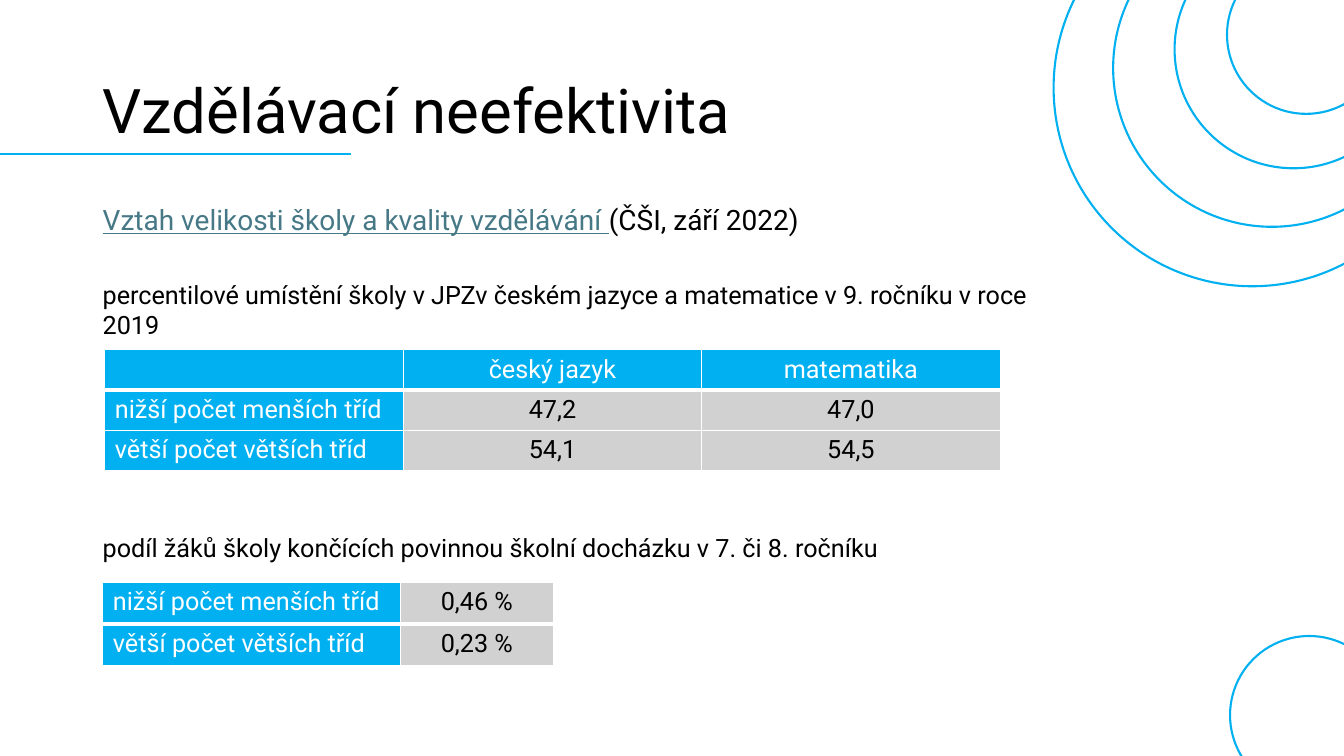
from lxml import etree
from pptx import Presentation
from pptx import util as u
from pptx.dml.color import RGBColor
from pptx.enum import shapes, text
from pptx.oxml import ns

BLUE = RGBColor(0x00, 0xB0, 0xF0)
GREY = RGBColor(0xD1, 0xD1, 0xD1)
WHITE = RGBColor(0xFF, 0xFF, 0xFF)
BLACK = RGBColor(0x00, 0x00, 0x00)
LINK = RGBColor(0x46, 0x78, 0x86)

THIN, THICK = u.Pt(1), u.Pt(3)
LEFT, CENTER = text.PP_ALIGN.LEFT, text.PP_ALIGN.CENTER


class SlideBuilder:
    font_name = "Roboto"
    line_width = u.Pt(1.5)

    def __init__(self, slide):
        self.slide = slide

    def add_run(self, paragraph, wording, size=18, color=BLACK, underline=False):
        run = paragraph.add_run()
        run.text = wording
        run.font.color.rgb = color
        font_format = {"name": self.font_name, "size": u.Pt(size), "underline": underline}
        for name, value in font_format.items():
            setattr(run.font, name, value)

    def add_text(self, box, runs, frame_format=None, paragraph_format=None):
        frame = self.slide.shapes.add_textbox(*map(u.Inches, box)).text_frame
        for name, value in {"word_wrap": True, **(frame_format or {})}.items():
            setattr(frame, name, value)
        paragraph = frame.paragraphs[0]
        for name, value in (paragraph_format or {}).items():
            setattr(paragraph, name, value)
        for run in runs:
            self.add_run(paragraph, **run)

    def add_circle(self, parent, left, top, diameter):
        circle = parent.add_shape(shapes.MSO_SHAPE.OVAL,
                                  *map(u.Inches, (left, top, diameter, diameter)))
        circle.shadow.inherit = False
        circle.fill.background()
        circle.line.color.rgb = BLUE
        circle.line.width = self.line_width

    def add_line(self, start, end):
        line = self.slide.shapes.add_connector(shapes.MSO_CONNECTOR.STRAIGHT,
                                               *map(u.Inches, (*start, *end)))
        line.line.color.rgb = BLUE
        line.line.width = self.line_width
        etree.SubElement(line._element.spPr, ns.qn("a:effectLst"))

    def add_borders(self, cell, widths):
        properties = cell._tc.get_or_add_tcPr()
        for side, width in widths.items():
            border = etree.SubElement(properties, ns.qn(f"a:ln{side}"), w=str(width))
            fill = etree.SubElement(border, ns.qn("a:solidFill"))
            etree.SubElement(fill, ns.qn("a:srgbClr"), val=str(WHITE))

    def add_table(self, left, top, columns, row_height, rows, header=False):
        box = (left, top, sum(columns), row_height * len(rows))
        table = self.slide.shapes.add_table(len(rows), len(columns),
                                            *map(u.Inches, box)).table
        for column, width in zip(table.columns, columns):
            column.width = u.Inches(width)
        for row_index, row in enumerate(rows):
            table.rows[row_index].height = u.Inches(row_height)
            for column_index, wording in enumerate(row):
                cell = table.cell(row_index, column_index)
                is_label = column_index == 0 or (header and row_index == 0)
                # The first row is set off by a thick rule below it
                self.add_borders(cell, {"L": THIN, "R": THIN,
                                        "T": THICK if row_index == 1 else THIN,
                                        "B": THICK if row_index == 0 else THIN})
                cell.fill.solid()
                cell.fill.fore_color.rgb = BLUE if is_label else GREY
                paragraph = cell.text_frame.paragraphs[0]
                paragraph.alignment = CENTER if column_index else LEFT
                if wording:
                    self.add_run(paragraph, wording, color=WHITE if is_label else BLACK)


def main():
    presentation = Presentation()
    presentation.slide_width = u.Inches(13.33)
    presentation.slide_height = u.Inches(7.5)
    slide = presentation.slides.add_slide(presentation.slide_layouts[6])
    builder = SlideBuilder(slide)

    # Title and source line
    builder.add_text((0.92, 0.4, 11.5, 1.45),
                     [{"wording": "Vzdělávací neefektivita", "size": 44}],
                     {"vertical_anchor": text.MSO_ANCHOR.MIDDLE}, {"line_spacing": 0.9})
    builder.add_text((0.92, 2, 10.13, 1.21),
                     [{"wording": "Vztah velikosti školy a kvality vzdělávání ",
                       "size": 20, "color": LINK, "underline": True},
                      {"wording": "(ČŠI, září 2022)", "size": 20}],
                     paragraph_format={"line_spacing": 0.9, "space_before": u.Pt(10)})

    # Decorative line and circles
    builder.add_line((0, 1.53), (3.48, 1.53))
    builder.add_circle(slide.shapes, 12.2, 6.31, 1.57)
    rings = slide.shapes.add_group_shape()
    for ring in ((10.45, -1.1, 3.94), (11.04, -0.9, 3.15),
                 (11.65, -0.69, 2.36), (12.17, -0.44, 1.57)):
        builder.add_circle(rings.shapes, *ring)

    # Percentile ranking
    smaller, larger = "nižší počet menších tříd", "větší počet větších tříd"
    builder.add_text((0.92, 2.72, 9.83, 0.4),
                     [{"wording": "percentilové umístění školy v JPZv českém jazyce "
                                  "a matematice v 9. ročníku v roce 2019"}])
    builder.add_table(1.04, 3.47, [2.96] * 3, 0.4,
                      [("", "český jazyk", "matematika"),
                       (smaller, "47,2", "47,0"),
                       (larger, "54,1", "54,5")], header=True)

    # Early school leavers
    builder.add_table(1.02, 5.78, [2.95, 1.52], 0.41,
                      [(smaller, "0,46 %"), (larger, "0,23 %")])
    builder.add_text((0.92, 5.23, 9.72, 0.4),
                     [{"wording": "podíl žáků školy končících povinnou školní docházku "
                                  "v 7. či 8. ročníku"}])

    presentation.save("out.pptx")


if __name__ == "__main__":
    main()
